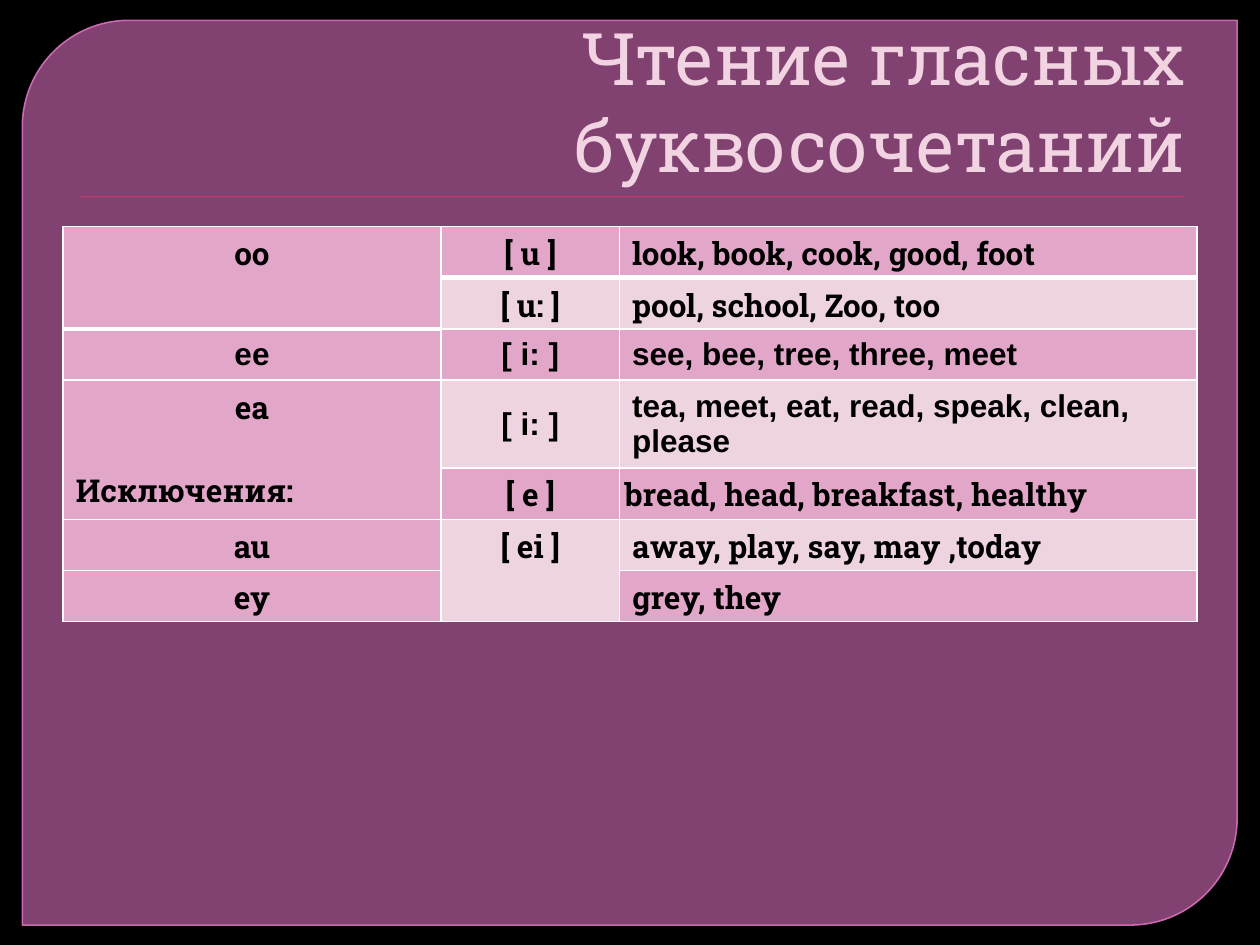
from lxml.etree import SubElement
from pptx import Presentation
from pptx.dml.color import RGBColor
from pptx.enum.shapes import MSO_SHAPE
from pptx.enum.text import MSO_ANCHOR, PP_ALIGN
from pptx.oxml.ns import qn
from pptx.util import Cm, Pt

COLORS = {
    "background": "000000",
    "panel": "C764AF",
    "panel_line": "DD75C2",
    "rule": "B83D68",
    "title": "F2D3E2",
    "text": "000000",
    "border": "FFFFFF",
    "dark": "E2A7C8",
    "light": "EDD4E0",
}
SLAB, SANS = "Roboto Slab", "Arial"


def rgb(name):
    return RGBColor.from_string(COLORS[name])


class SlideBuilder:
    """Holds the text style and the current slide."""

    def __init__(self, slide, font=SLAB, size=18):
        self.slide = slide
        self.font = font
        self.size = size

    def background(self, color):
        fill = self.slide.background.fill
        fill.solid()
        fill.fore_color.rgb = rgb(color)

    def set_alpha(self, properties, percent):
        color = properties.find(qn("a:solidFill")).find(qn("a:srgbClr"))
        SubElement(color, qn("a:alpha")).set("val", str(percent * 1000))

    def shape(self, kind, box, fill, line=None, width=1):
        shape = self.slide.shapes.add_shape(kind, *map(Cm, box))
        shape.shadow.inherit = False
        shape.fill.solid()
        shape.fill.fore_color.rgb = rgb(fill)
        if line:
            shape.line.color.rgb = rgb(line)
            shape.line.width = Pt(width)
        else:
            shape.line.fill.background()
        return shape

    def run(self, paragraph, text, color, size, font, bold=False):
        run = paragraph.add_run()
        run.text = text
        run.font.name = font
        run.font.size = Pt(size)
        run.font.bold = bold
        run.font.color.rgb = rgb(color)

    def title(self, box, text, size):
        frame = self.slide.shapes.add_textbox(*map(Cm, box)).text_frame
        frame.word_wrap = True
        frame.vertical_anchor = MSO_ANCHOR.BOTTOM
        paragraph = frame.paragraphs[0]
        paragraph.alignment = PP_ALIGN.RIGHT
        self.run(paragraph, text, "title", size, self.font)

    def table(self, left, top, widths, row_height, row_count):
        frame = self.slide.shapes.add_table(
            row_count, len(widths), Cm(left), Cm(top),
            Cm(sum(widths)), Cm(row_height * row_count))
        table = frame.table
        for column, width in zip(table.columns, widths):
            column.width = Cm(width)
        for row in table.rows:
            row.height = Cm(row_height)
        return table

    def cell_style(self, cell, fill, top=1, bottom=1):
        properties = cell._tc.get_or_add_tcPr()
        for side, width in (("L", 1), ("R", 1), ("T", top), ("B", bottom)):
            line = SubElement(properties, qn(f"a:ln{side}"), w=str(Pt(width)))
            solid = SubElement(line, qn("a:solidFill"))
            SubElement(solid, qn("a:srgbClr"), val=COLORS["border"])
        cell.fill.solid()
        cell.fill.fore_color.rgb = rgb(fill)

    def cell_text(self, cell, text, centered, font=None, middle=False, margin=None):
        if middle:
            cell.vertical_anchor = MSO_ANCHOR.MIDDLE
        if margin is not None:
            cell.margin_left = cell.margin_right = Cm(margin)
            cell.margin_top = cell.margin_bottom = Cm(margin)
        paragraph = cell.text_frame.paragraphs[0]
        paragraph.alignment = PP_ALIGN.CENTER if centered else PP_ALIGN.LEFT
        self.run(paragraph, text, "text", self.size, font or self.font, True)

    def cell_note(self, cell, text, space_before):
        paragraph = cell.text_frame.add_paragraph()
        paragraph.alignment = PP_ALIGN.LEFT
        paragraph.space_before = Pt(space_before)
        self.run(paragraph, text, "text", self.size, self.font, True)


# Letters, sound, example words; None belongs to the merged cell above
ROWS = [
    ("oo", "[ u ]", "look, book, cook, good, foot"),
    (None, "[ u: ]", "pool, school, Zoo, too"),
    ("ee", "[ i: ]", "see, bee, tree, three, meet"),
    ("ea", "[ i: ]", "tea, meet, eat, read, speak, clean, please"),
    (None, "[ e ]", "bread, head, breakfast, healthy"),
    ("au", "[ ei ]", "away, play, say, may ,today"),
    ("ey", None, "grey, they"),
]
SANS_MIDDLE = {"font": SANS, "middle": True}
SPECIAL = {(2, column): SANS_MIDDLE for column in range(3)}
SPECIAL.update({(3, column): SANS_MIDDLE for column in (1, 2)})
SPECIAL.update({(4, column): {"middle": True, "margin": 0.1} for column in (1, 2)})
# Cells that lie just above a thick line
THICK_BELOW = {(0, 0), (1, 0), (0, 1), (0, 2)}


def main():
    presentation = Presentation()
    presentation.slide_width, presentation.slide_height = Cm(25.4), Cm(19.05)
    slide = presentation.slides.add_slide(presentation.slide_layouts[6])
    builder = SlideBuilder(slide)

    # Backdrop and rule
    builder.background("background")
    panel = builder.shape(MSO_SHAPE.ROUND_2_DIAG_RECTANGLE,
                          (0.45, 0.41, 24.49, 18.24), "panel", "panel_line", 0.87)
    panel.adjustments[0], panel.adjustments[1] = 0.118, 0
    properties = panel._element.spPr
    builder.set_alpha(properties, 65)
    builder.set_alpha(properties.find(qn("a:ln")), 88)
    builder.shape(MSO_SHAPE.RECTANGLE, (1.62, 3.95, 22.23, 0.03), "rule")

    # Title
    builder.title((1.27, 0.71, 22.86, 3.18), "Чтение гласных буквосочетаний", 41.4)

    # Reading table
    table = builder.table(1.27, 4.57, (7.62, 3.6, 11.64), 1.03, len(ROWS))
    for first, last, column in ((0, 1, 0), (3, 4, 0), (5, 6, 1)):
        table.cell(first, column).merge(table.cell(last, column))
    for row, texts in enumerate(ROWS):
        for column, text in enumerate(texts):
            cell = table.cell(row, column)
            banded = row % 2 and column or (row, column) == (6, 1)
            builder.cell_style(cell, "light" if banded else "dark",
                               top=3 if (row - 1, column) in THICK_BELOW else 1,
                               bottom=3 if (row, column) in THICK_BELOW else 1)
            if text:
                builder.cell_text(cell, text, column < 2,
                                  **SPECIAL.get((row, column), {}))
    builder.cell_note(table.cell(3, 0), "Исключения:", 24)

    presentation.save("out.pptx")


if __name__ == "__main__":
    main()
